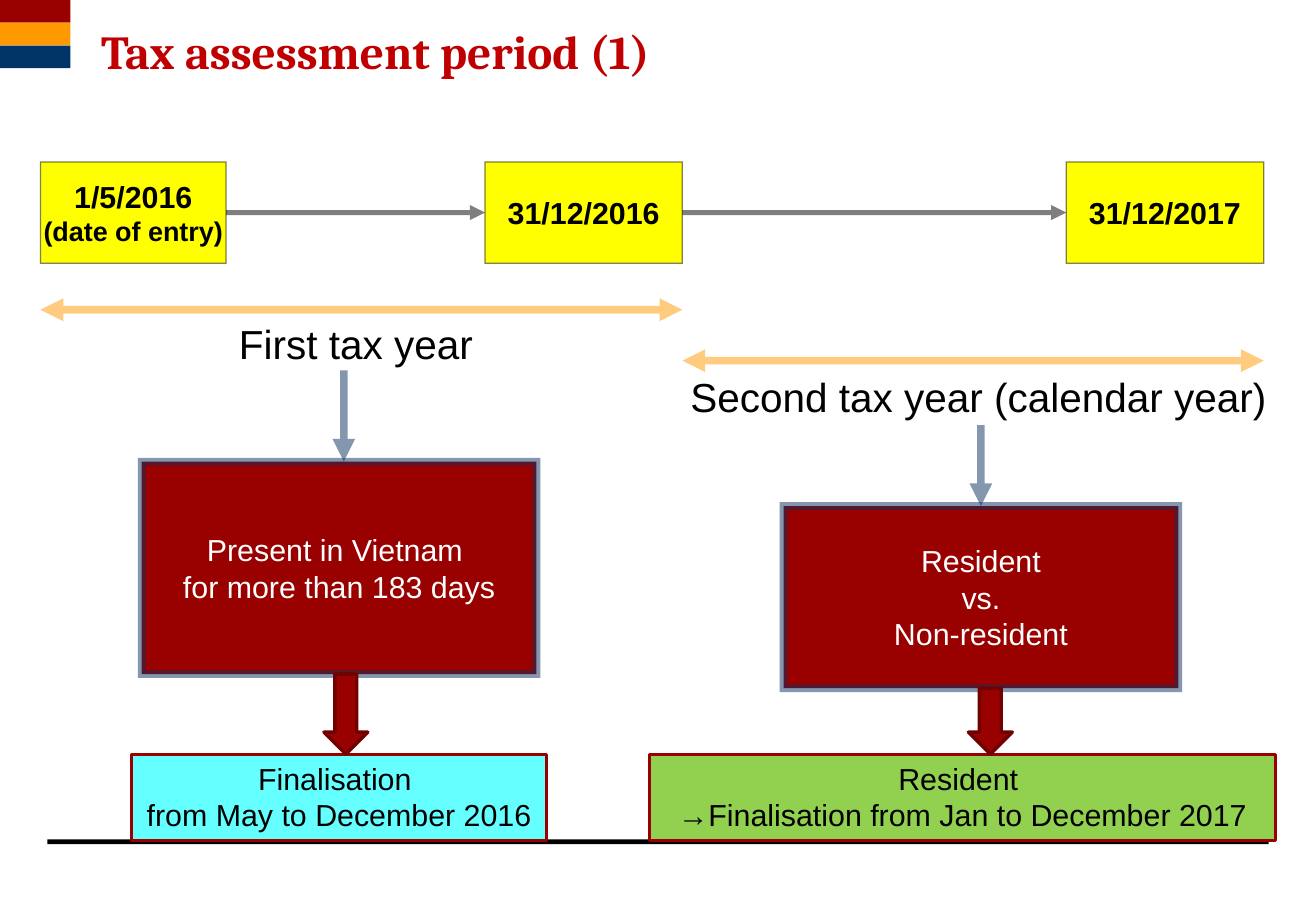
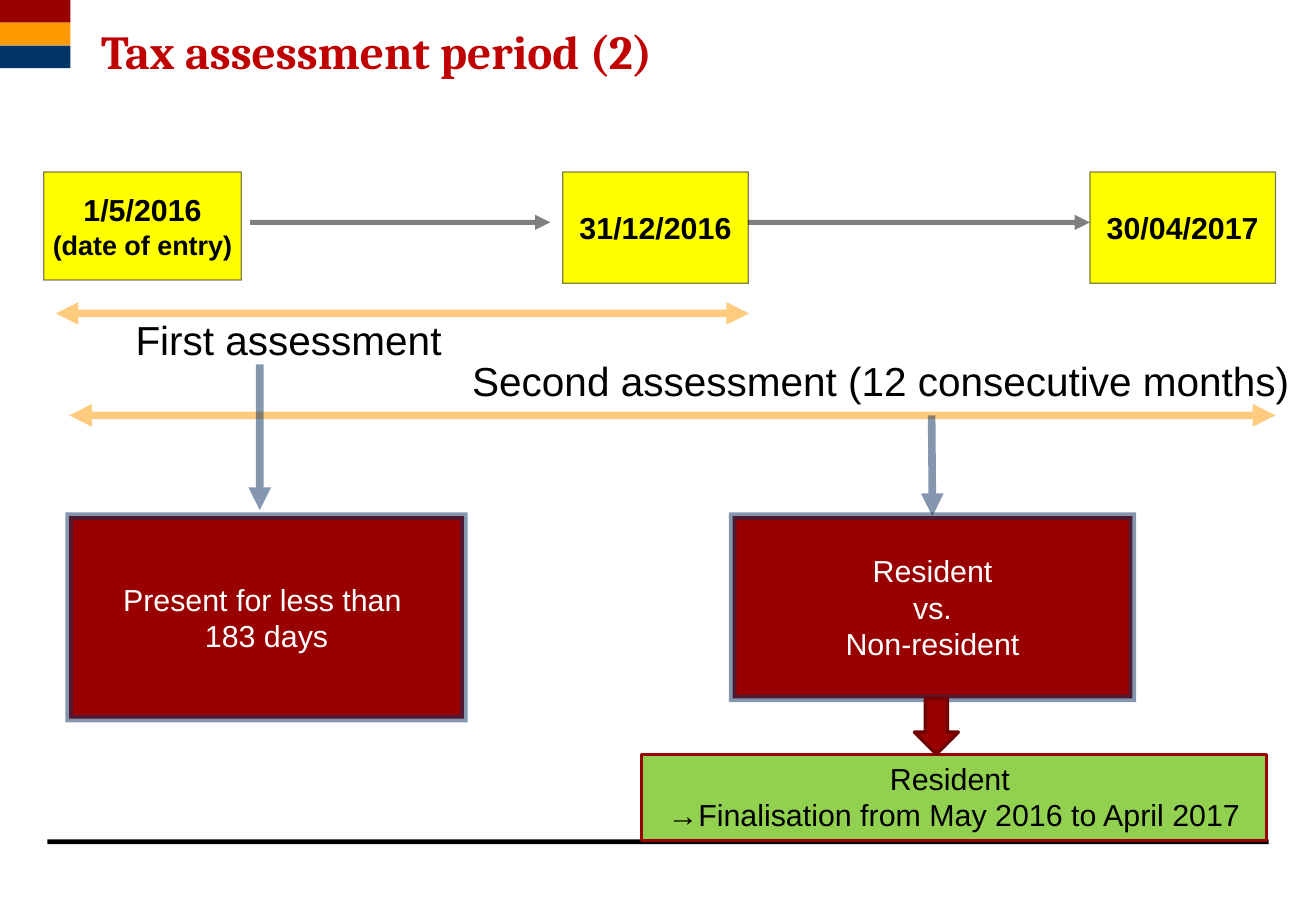
from lxml.etree import SubElement
from pptx import Presentation
from pptx.dml.color import RGBColor
from pptx.enum.shapes import MSO_CONNECTOR, MSO_SHAPE
from pptx.enum.text import MSO_ANCHOR, MSO_AUTO_SIZE, PP_ALIGN
from pptx.oxml.ns import qn
from pptx.util import Pt

COLOURS = {
    "red": "990000", "orange": "FF9900", "navy": "003366", "black": "000000",
    "white": "FFFFFF", "title": "C00000", "yellow": "FFFF00", "slate": "0A305E",
    "dark red": "710000", "cyan": "66FFFF", "green": "92D050",
}
TOP, LEFT, BOTTOM, RIGHT = range(4)
RESULT_TOP, RESULT_HEIGHT = 447, 51
LABEL_HEIGHT = 30
DOWN_ARROW_WIDTH = 26

# Bands shared by both slides: place and colour
BAND_HEIGHT = 13.5
BANDS = [((28, 497.5, 724, 2.9), "black")] + [
    ((0, row * BAND_HEIGHT, 41.7, BAND_HEIGHT), colour)
    for row, colour in enumerate(("red", "orange", "navy"))
]

# Box styles: fill, line, line width, line opacity, text colour, bold
BOX_STYLES = {
    "date": ("yellow", "black", 0.75, 50, "black", True),
    "test": ("red", "slate", 4.5, 50, "white", False),
    "cyan": ("cyan", "red", 1.75, 100, "black", False),
    "green": ("green", "red", 1.75, 100, "black", False),
}
# Arrow styles: colour, width, heads at both ends
ARROW_STYLES = {
    "time": ("black", 3, False),
    "span": ("orange", 4.5, True),
    "step": ("slate", 4.5, False),
}

ENTRY = [("1/5/2016", 18), ("(date of entry)", 16)]
RESIDENT_TEST = [("Resident", 18), ("vs.", 18), ("Non-resident", 18)]

# Labels: text, centre, top, width. Arrow ends: points or (box name, side) joints
SLIDES = [
    {
        "title": "Tax assessment period (1)",
        "boxes": {
            "entry": ("date", (24, 96, 110, 60), ENTRY),
            "year end": ("date", (287.5, 96, 117, 60), [("31/12/2016", 18)]),
            "period end": ("date", (632, 96, 117, 60), [("31/12/2017", 18)]),
            "presence": ("test", (84, 273.6, 234, 126),
                         [("Present in Vietnam ", 18), ("for more than 183 days", 18)]),
            "residence": ("test", (464.4, 300, 234, 108), RESIDENT_TEST),
        },
        "labels": [("First tax year", 211, 188.4, 182),
                   ("Second tax year (calendar year)", 580, 220, 380)],
        "arrows": [
            ("time", ("entry", RIGHT), ("year end", LEFT)),
            ("time", ("year end", RIGHT), ("period end", LEFT)),
            ("span", (24, 183.6), (404.5, 183.6)),
            ("span", (404.5, 213.8), (749, 213.8)),
            ("step", (203.8, 219.6), (203.8, 273.6)),
            ("step", (581.4, 252), ("residence", TOP)),
        ],
        "results": [("cyan", 78, 246, ["Finalisation ", "from May to December 2016"]),
                    ("green", 385, 371,
                     ["Resident ", "→Finalisation from Jan to December 2017"])],
        "down arrows": [("presence", 205), ("residence", 587)],
    },
    {
        "title": "Tax assessment period (2)",
        "boxes": {
            "entry": ("date", (26, 102, 117, 64), ENTRY),
            "year end": ("date", (333.5, 102, 110, 66), [("31/12/2016", 18)]),
            "period end": ("date", (646, 102, 110, 66), [("30/04/2017", 18)]),
            "presence": ("test", (41, 306, 234, 120),
                         [("Present for less than ", 18), ("183 days", 18)]),
            "residence": ("test", (434.2, 306, 237, 108), RESIDENT_TEST),
        },
        "labels": [("First assessment", 171, 186, 220),
                   ("Second assessment (12 consecutive months)", 522, 210.2, 514)],
        "arrows": [
            ("time", (148.3, 131.8), (326.2, 131.8)),
            ("time", (443.5, 131.8), (646, 131.8)),
            ("span", (33, 185.8), (444, 185.8)),
            ("span", (41, 246.2), (756, 246.2)),
            ("step", (154, 216), (154, 302.4)),
            ("step", (552.2, 246.2), ("residence", TOP)),
        ],
        "results": [("green", 380, 371,
                     ["Resident ", "→Finalisation from May 2016 to April 2017"])],
        "down arrows": [("residence", 555)],
    },
]


def rgb(name):
    return RGBColor.from_string(COLOURS[name])


def points(values):
    return [Pt(value) for value in values]


def style_line(shape, colour, width, opacity=100):
    shape.line.width = Pt(width)
    shape.line.color.rgb = rgb(colour)
    line_element = shape.element.spPr.find(qn("a:ln"))
    if opacity < 100:
        for colour_element in line_element.iter(qn("a:srgbClr")):
            SubElement(colour_element, qn("a:alpha"), val=str(opacity * 1000))
        SubElement(line_element, qn("a:miter"), lim="800000")
    return line_element


def write(frame, lines, colour, bold=False, font="Arial", align=PP_ALIGN.CENTER):
    for index, (text, size) in enumerate(lines):
        para = frame.paragraphs[0] if index == 0 else frame.add_paragraph()
        para.alignment = align
        span = para.add_run()
        span.text = text
        span.font.name, span.font.size, span.font.bold = font, Pt(size), bold
        span.font.color.rgb = rgb(colour)


def add_filled(page, preset, place, fill):
    shape = page.shapes.add_shape(preset, *points(place))
    shape.shadow.inherit = False
    shape.fill.solid()
    shape.fill.fore_color.rgb = rgb(fill)
    return shape


def add_box(page, style, place, lines):
    fill, line, width, opacity, text_colour, bold = BOX_STYLES[style]
    box = add_filled(page, MSO_SHAPE.RECTANGLE, place, fill)
    style_line(box, line, width, opacity)
    box.text_frame.word_wrap = False
    box.text_frame.vertical_anchor = MSO_ANCHOR.MIDDLE
    write(box.text_frame, lines, text_colour, bold)
    return box


def add_result(page, style, left, width, texts):
    place = (left, RESULT_TOP, width, RESULT_HEIGHT)
    box = add_box(page, style, place, [(text, 18) for text in texts])
    box.text_frame.word_wrap = True
    box.text_frame.vertical_anchor = MSO_ANCHOR.TOP
    box.text_frame.auto_size = MSO_AUTO_SIZE.SHAPE_TO_FIT_TEXT


def add_label(page, text, centre, top, width):
    place = (centre - width / 2, top, width, LABEL_HEIGHT)
    label = page.shapes.add_textbox(*points(place))
    label.text_frame.word_wrap = True
    label.text_frame.vertical_anchor = MSO_ANCHOR.MIDDLE
    write(label.text_frame, [(text, 24)], "black")


def add_arrow(page, boxes, style, start, end):
    colour, width, double = ARROW_STYLES[style]
    start_joint, end_joint = start[0] in boxes, end[0] in boxes
    start_point = (0, 0) if start_joint else start
    end_point = (0, 0) if end_joint else end
    arrow = page.shapes.add_connector(
        MSO_CONNECTOR.STRAIGHT, *points((*start_point, *end_point)))
    if start_joint:
        arrow.begin_connect(boxes[start[0]], start[1])
    if end_joint:
        arrow.end_connect(boxes[end[0]], end[1])
    line_element = style_line(arrow, colour, width, 50)
    for tag in ("a:headEnd", "a:tailEnd") if double else ("a:tailEnd",):
        SubElement(line_element, qn(tag), type="triangle")
    SubElement(arrow.element.spPr, qn("a:effectLst"))


def add_down_arrow(page, box, centre):
    top = (box.top + box.height) / Pt(1)
    place = (centre - DOWN_ARROW_WIDTH / 2, top, DOWN_ARROW_WIDTH, RESULT_TOP - top)
    arrow = add_filled(page, MSO_SHAPE.DOWN_ARROW, place, "red")
    style_line(arrow, "dark red", 2)


def set_title(page, text):
    title = page.shapes.title
    title.left, title.top, title.width, title.height = points((60, 0, 700, 62.5))
    frame = title.text_frame
    frame.margin_left = frame.margin_right = frame.margin_bottom = 0
    frame.margin_top = Pt(3)
    frame.vertical_anchor = MSO_ANCHOR.MIDDLE
    write(frame, [(text, 28)], "title", True, "Cambria", PP_ALIGN.LEFT)
    frame.paragraphs[0].line_spacing = 0.85


def add_bands(page, layout):
    # Drawn on a page, then moved to the layout that both pages use
    for place, colour in BANDS:
        band = add_filled(page, MSO_SHAPE.RECTANGLE, place, colour)
        band.line.fill.background()
        layout.shapes.element.append(band.element)


def build_page(page, content):
    set_title(page, content["title"])
    boxes = {name: add_box(page, *box) for name, box in content["boxes"].items()}
    for label in content["labels"]:
        add_label(page, *label)
    for arrow in content["arrows"]:
        add_arrow(page, boxes, *arrow)
    for result in content["results"]:
        add_result(page, *result)
    for name, centre in content["down arrows"]:
        add_down_arrow(page, boxes[name], centre)


def main():
    deck = Presentation()
    deck.slide_width, deck.slide_height = Pt(780), Pt(540)
    layout = deck.slide_layouts[5]
    pages = [deck.slides.add_slide(layout) for content in SLIDES]
    add_bands(pages[0], layout)
    for page, content in zip(pages, SLIDES):
        build_page(page, content)
    deck.save("out.pptx")


if __name__ == "__main__":
    main()
